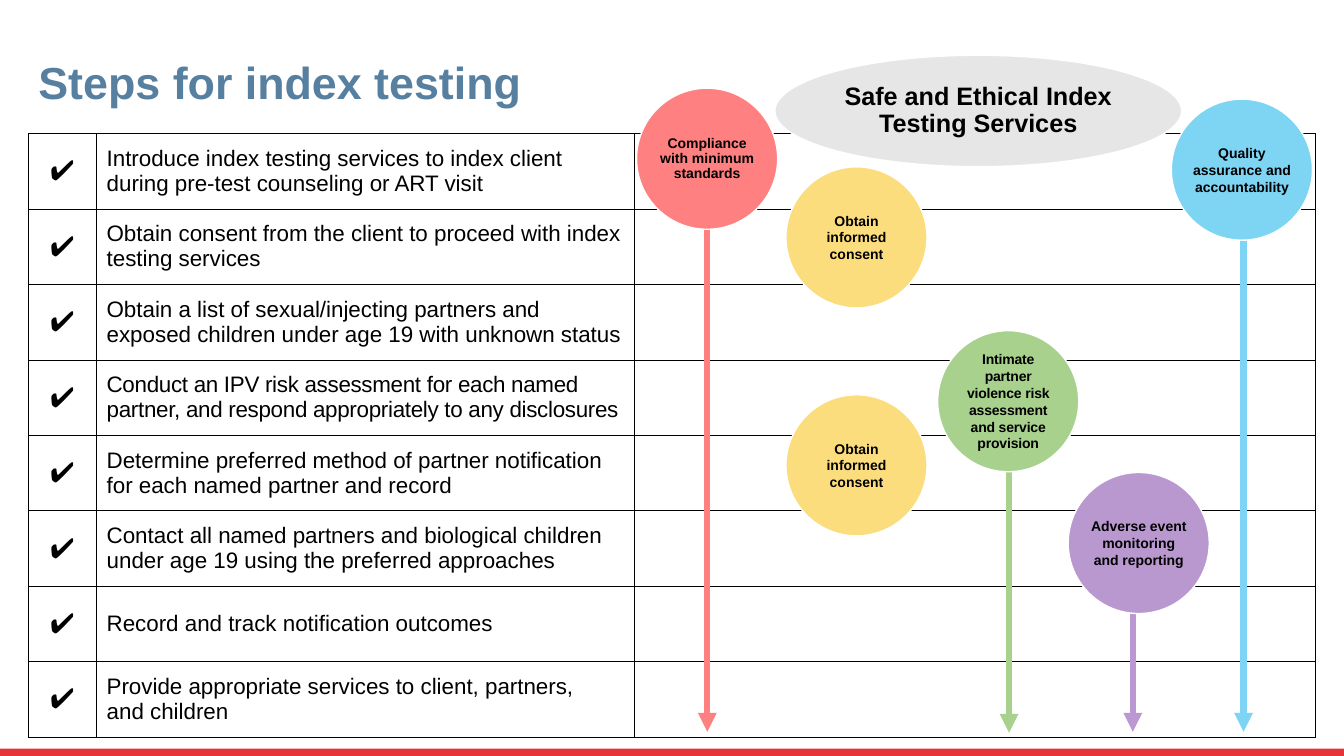
from dataclasses import dataclass

from lxml.etree import SubElement
from pptx import Presentation
from pptx.dml.color import RGBColor as Color
from pptx.enum.shapes import MSO_CONNECTOR as Connector, MSO_SHAPE as Shape
from pptx.enum.text import MSO_ANCHOR as Anchor, PP_ALIGN as Align
from pptx.oxml.ns import qn
from pptx.util import Pt


@dataclass(frozen=True)
class Theme:
    font: str = "Arial"
    check_font: str = "Calibri"
    title: str = "577F9F"
    ink: str = "000000"
    white: str = "FFFFFF"
    grey: str = "E7E6E6"
    red: str = "E73439"
    coral: str = "FF8080"
    yellow: str = "FCDD7D"
    green: str = "A9D18E"
    purple: str = "B998D0"
    blue: str = "7DD4F3"
    coral_line: str = "FE8080"
    purple_line: str = "BB98D1"
    blue_line: str = "7DD4F4"
    title_size: float = 32
    check_size: float = 20
    heading_size: float = 18
    step_size: float = 16
    label_size: float = 10


THEME = Theme()
DIAMETER = 100.8
STEPS = [
    ("Introduce index testing services to index client during pre-test counseling or ART visit", 0),
    ("Obtain consent from the client to proceed with index testing services", 0),
    ("Obtain a list of sexual/injecting partners and exposed children under age 19 with unknown status", 0),
    ("Conduct an IPV risk assessment for each named partner, and respond appropriately to any disclosures", -0.2),
    ("Determine preferred method of partner notification for each named partner and record", 0),
    ("Contact all named partners and biological children under age 19 using the preferred approaches", 0),
    ("Record and track notification outcomes", 0),
    ("Provide appropriate services to client, partners, \nand children", 0),
]
ARROWS = [
    (505.2, 113, 522.7, THEME.coral_line),
    (888.3, 121, 522.7, THEME.blue_line),
    (809.2, 432.7, 522.7, THEME.purple_line),
    (720.8, 311.8, 523.4, THEME.green),
]
CIRCLES = [
    ("Intimate partner violence risk assessment and service provision", 669.8, 236.2, THEME.green,
     dict(tracking=-0.1)),
    ("Adverse event monitoring and reporting", 763, 337.5, THEME.purple, {}),
    ("Obtain informed consent", 561.4, 282, THEME.yellow, dict(insets=(7.2, 3.6))),
    ("Obtain informed consent", 561.4, 119.2, THEME.yellow, dict(insets=(7.2, 3.6))),
    ("Compliance with minimum standards", 454.7, 63, THEME.coral, dict(spacing=0.9)),
    ("Quality assurance and accountability", 836.7, 70.8, THEME.blue, {}),
]


def write(frame, text, size, font=THEME.font, color=THEME.ink, bold=False,
          align=Align.LEFT, spacing=None, after=None, tracking=0):
    para = frame.paragraphs[0]
    para.alignment = align
    if spacing:
        para.line_spacing = spacing
    if after:
        para.space_after = Pt(after)
    for index, line in enumerate(text.split("\n")):
        if index:
            para.add_line_break()
        span = para.add_run()
        span.text = line
        span.font.size = Pt(size)
        span.font.name = font
        span.font.bold = bold
        span.font.color.rgb = Color.from_string(color)
        if tracking:
            span._r.get_or_add_rPr().set("spc", str(round(tracking * 100)))


class Page:
    def __init__(self, deck, theme):
        self.theme = theme
        self.slide = deck.slides.add_slide(deck.slide_layouts[6])
        self.shapes = self.slide.shapes

    def border(self, cell, drawn):
        properties = cell._tc.get_or_add_tcPr()
        for side in ("lnL", "lnR", "lnT", "lnB"):
            line = SubElement(properties, qn(f"a:{side}"), w=str(Pt(0.5)))
            if side in drawn:
                fill = SubElement(line, qn("a:solidFill"))
                SubElement(fill, qn("a:srgbClr"), val=self.theme.ink)
            else:
                SubElement(line, qn("a:noFill"))

    def checklist(self, title, steps, left, top, widths, title_height, row_height):
        heights = [title_height] + [row_height] * len(steps)
        table = self.shapes.add_table(len(heights), len(widths), Pt(left), Pt(top),
                                      Pt(sum(widths)), Pt(sum(heights))).table
        table.first_row = table.horz_banding = False
        for column, width in zip(table.columns, widths):
            column.width = Pt(width)
        for index, (row, height) in enumerate(zip(table.rows, heights)):
            row.height = Pt(height)
            for cell in row.cells:
                self.border(cell, ("lnL", "lnR", "lnT", "lnB") if index else ("lnB",))
                cell.fill.background()
                cell.vertical_anchor = Anchor.MIDDLE
        heading = table.cell(0, 0)
        heading.merge(table.cell(0, len(widths) - 1))
        write(heading.text_frame, title, self.theme.title_size, color=self.theme.title,
              bold=True, after=12)
        for index, (step, tracking) in enumerate(steps, 1):
            write(table.cell(index, 0).text_frame, "✔", self.theme.check_size,
                  font=self.theme.check_font, align=Align.CENTER)
            write(table.cell(index, 1).text_frame, step, self.theme.step_size, tracking=tracking)

    def arrow(self, center, top, bottom, color):
        arrow = self.shapes.add_connector(Connector.STRAIGHT, Pt(center), Pt(top),
                                          Pt(center), Pt(bottom))
        arrow.line.width = Pt(4.5)
        arrow.line.color.rgb = Color.from_string(color)
        SubElement(arrow.line._get_or_add_ln(), qn("a:tailEnd"), type="triangle")
        SubElement(arrow._element.spPr, qn("a:effectLst"))

    def shape(self, kind, left, top, width, height, fill, outline=None):
        shape = self.shapes.add_shape(kind, Pt(left), Pt(top), Pt(width), Pt(height))
        shape.shadow.inherit = False
        shape.fill.solid()
        shape.fill.fore_color.rgb = Color.from_string(fill)
        if outline:
            shape.line.color.rgb = Color.from_string(outline)
            shape.line.width = Pt(1)
        else:
            shape.line.fill.background()
        return shape

    def ellipse(self, text, left, top, width, height, fill, size, insets=(0, 0), **style):
        shape = self.shape(Shape.OVAL, left, top, width, height, fill, self.theme.white)
        frame = shape.text_frame
        frame.word_wrap = True
        frame.vertical_anchor = Anchor.MIDDLE
        frame.margin_left = frame.margin_right = Pt(insets[0])
        frame.margin_top = frame.margin_bottom = Pt(insets[1])
        write(frame, text, size, bold=True, align=Align.CENTER, **style)


def main():
    deck = Presentation()
    deck.slide_width, deck.slide_height = Pt(960), Pt(540)
    page = Page(deck, THEME)
    page.checklist("Steps for index testing", STEPS, 20.2, 24.6, (48.8, 384, 486.5), 70.8, 53.9)
    for arrow in ARROWS:
        page.arrow(*arrow)
    for text, left, top, fill, style in CIRCLES:
        page.ellipse(text, left, top, DIAMETER, DIAMETER, fill, THEME.label_size, **style)
    page.ellipse("Safe and Ethical Index Testing Services", 553.5, 39.5, 290.6, 79.6,
                 THEME.grey, THEME.heading_size, insets=(7.2, 3.6), spacing=0.9)
    page.shape(Shape.RECTANGLE, 0, 534.7, 960, 5.3, THEME.red)
    deck.save("out.pptx")


if __name__ == "__main__":
    main()
